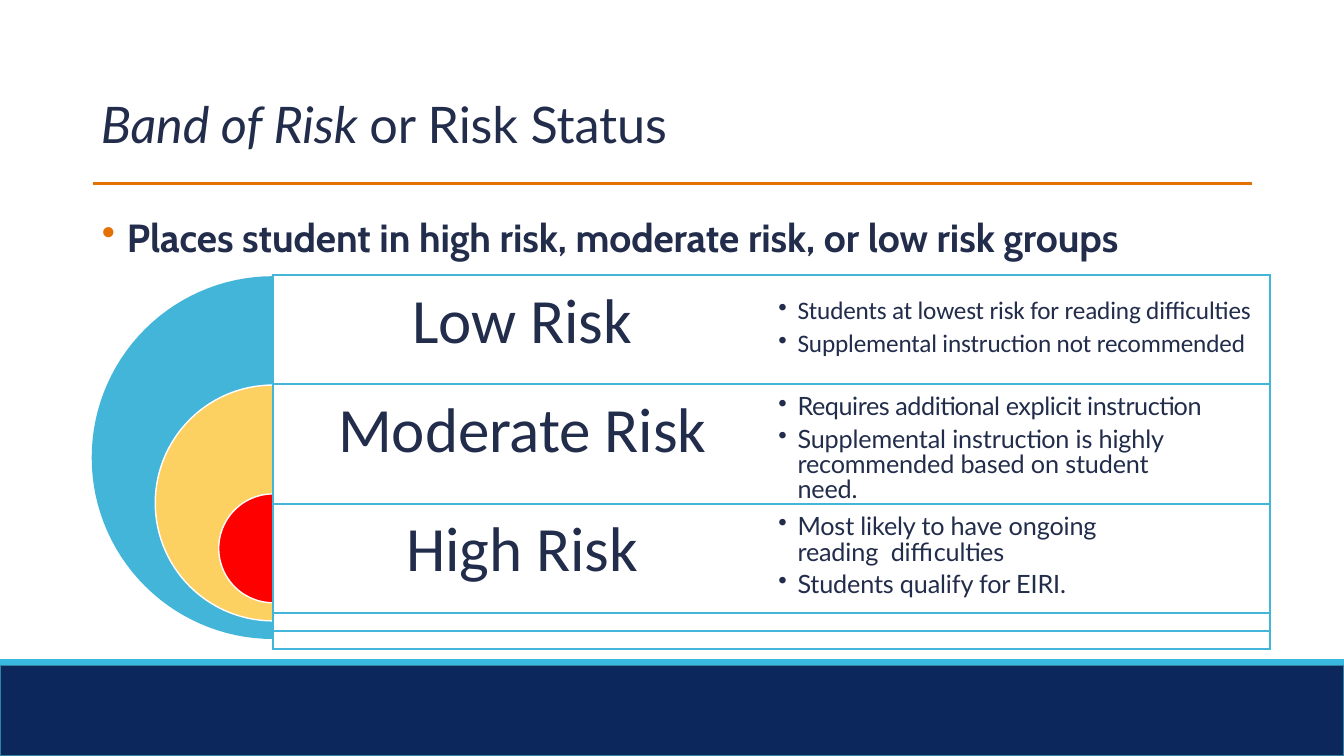
from math import cos, pi, sin

from lxml.etree import SubElement
from pptx import Presentation
from pptx.dml.color import RGBColor
from pptx.enum.shapes import MSO_CONNECTOR as CONN, MSO_SHAPE as SHAPE
from pptx.enum.text import PP_ALIGN as ALIGN
from pptx.oxml import parse_xml
from pptx.oxml.ns import nsdecls, qn
from pptx.util import Inches, Pt

NAVY, ORANGE, BLUE, INK = "0B275C", "E57102", "42B5D9", "222C4B"
HEADING = {"name": "Calibri", "size": Pt(45)}
LATO = {"name": "Lato", "size": Pt(18)}

# Heading, top inset, bullet top inset, bullet right inset, bullet font,
# then bullets as (text, spacing in hundredths of a point, paragraph format)
RISKS = [
    ("Low Risk", 0.2, 0, {"name": "Calibri", "size": Pt(18)}, [
        ("Students at lowest risk for reading difficulties", -10, {}),
        ("Supplemental instruction not recommended", -10,
         {"space_before": Pt(1.4)}),
    ]),
    ("Moderate Risk", 0.07, 0.6, LATO, [
        ("Requires additional explicit instruction", -30, {}),
        ("Supplemental instruction is highly  recommended based on student need.",
         -10, {"space_before": Pt(5), "line_spacing": Pt(18)}),
    ]),
    ("High Risk", 0.1, 1.3, LATO, [
        ("Most likely to have ongoing reading  difficulties", -10,
         {"line_spacing": Pt(19)}),
        ("Students qualify for EIRI.", -10, {"space_before": Pt(1.2)}),
    ]),
]


def rgb(color):
    return RGBColor.from_string(color)


def set_attrs(obj, values):
    for name, value in values.items():
        setattr(obj, name, value)


def add_run(p, text, font, spacing=-10):
    r = p.add_run()
    r.text = text
    set_attrs(r.font, font)
    r.font.color.rgb = rgb(INK)
    r.font._element.set("spc", str(spacing))


def set_bullet(p, margin, indent, color=INK):
    pPr = p._p.get_or_add_pPr()
    pPr.set("marL", str(Inches(margin)))
    pPr.set("indent", str(Inches(indent)))
    SubElement(SubElement(pPr, qn("a:buClr")), qn("a:srgbClr"), val=color)
    SubElement(pPr, qn("a:buChar"), char="•")


def add_text_box(slide, left, top, width, height):
    """Return the first paragraph of a new box."""
    sp = slide.shapes.add_textbox(
        Inches(left), Inches(top), Inches(width), Inches(height))
    tf = sp.text_frame
    set_attrs(tf, {"word_wrap": True, "margin_left": 0, "margin_right": 0,
                   "margin_top": Inches(0.01), "margin_bottom": 0})
    return tf.paragraphs[0]


def add_rule(slide, left, right, y, color, weight):
    line = slide.shapes.add_connector(
        CONN.STRAIGHT, Inches(left), Inches(y), Inches(right), Inches(y))
    line.line.color.rgb = rgb(color)
    line.line.width = Pt(weight)
    SubElement(line._element.spPr, qn("a:effectLst"))


def add_footer(slide):
    sp = slide.shapes.add_shape(
        SHAPE.RECTANGLE, 0, Inches(6.6), Inches(13.33), Inches(0.9))
    sp.shadow.inherit = False
    sp.fill.solid()
    sp.fill.fore_color.rgb = rgb(NAVY)
    sp.line.color.rgb = rgb("2E849F")
    sp.line.width = Pt(1)
    add_rule(slide, 0, 13.33, 6.57, "39B9DF", 4)


def add_half_disc(slide, right, top, radius, color, outlined):
    """Draw the left half of a disc, its flat side at right."""
    steps = 60
    points = [(Inches(right - radius * sin(pi * i / steps)),
               Inches(top + radius - radius * cos(pi * i / steps)))
              for i in range(steps + 1)]
    builder = slide.shapes.build_freeform(*points[0])
    builder.add_line_segments(points[1:], close=True)
    sp = builder.convert_to_shape()
    sp.shadow.inherit = False
    sp.fill.solid()
    sp.fill.fore_color.rgb = rgb(color)
    if outlined:
        sp.line.color.rgb = rgb("FFFFFF")
        sp.line.width = Pt(1)
    else:
        sp.line.fill.background()


def format_cell(cell, sides, top=0, right=0):
    """Clear the fill and draw borders on the given sides only."""
    set_attrs(cell, {"margin_left": 0, "margin_right": Inches(right),
                     "margin_top": Inches(top), "margin_bottom": 0})
    cell.fill.background()
    tcPr = cell._tc.get_or_add_tcPr()
    for i, side in enumerate("LRTB"):
        paint = (f'<a:solidFill><a:srgbClr val="{BLUE}"/></a:solidFill>'
                 if side in sides else "<a:noFill/>")
        tcPr.insert(i, parse_xml(
            f'<a:ln{side} {nsdecls("a")} w="{Pt(1.5)}">{paint}</a:ln{side}>'))


def fill_bullets(cell, bullets, font):
    tf = cell.text_frame
    for i, (text, spacing, layout) in enumerate(bullets):
        p = tf.add_paragraph() if i else tf.paragraphs[0]
        set_attrs(p, layout)
        set_bullet(p, 0.54, -0.19)
        add_run(p, text, font, spacing)


def add_risk_table(slide):
    heights = [1.08] * len(RISKS) + [0.18] * 2
    table = slide.shapes.add_table(
        len(heights), 2, Inches(2.71), Inches(2.73),
        Inches(9.89), Inches(sum(heights))).table
    set_attrs(table, {"first_row": False, "horz_banding": False})
    for column, width in zip(table.columns, (4.66, 5.23)):
        column.width = Inches(width)
    for row, height in zip(table.rows, heights):
        row.height = Inches(height)

    for i, (heading, top, right, font, bullets) in enumerate(RISKS):
        name, details = table.rows[i].cells
        format_cell(name, "LTB", 0.08)
        format_cell(details, "RTB", top, right)
        p = name.text_frame.paragraphs[0]
        p.alignment = ALIGN.CENTER
        p._p.get_or_add_pPr().set("marL", str(Inches(0.28)))
        add_run(p, heading, HEADING)
        fill_bullets(details, bullets, font)

    for i in range(len(RISKS), len(heights)):
        table.cell(i, 0).merge(table.cell(i, 1))
        for cell in table.rows[i].cells:
            format_cell(cell, "LRTB")
            SubElement(cell.text_frame.paragraphs[0]._p,
                       qn("a:endParaRPr"), sz="800")


def main():
    prs = Presentation()
    prs.slide_width, prs.slide_height = Inches(13.33), Inches(7.5)
    slide = prs.slides.add_slide(prs.slide_layouts[6])
    add_footer(slide)
    add_rule(slide, 0.92, 12.42, 1.82, ORANGE, 2.5)

    title = add_text_box(slide, 1, 0.91, 8, 0.63)
    for text, italic in (("Band of Risk ", True), ("or Risk Status", False)):
        add_run(title, text, {"name": "Lato", "size": Pt(36), "italic": italic})

    lead = add_text_box(slide, 1, 2.11, 10.6, 0.49)
    set_bullet(lead, 0.26, -0.25, ORANGE)
    add_run(lead, "Places student in high risk, moderate risk, or low risk groups",
            {"name": "Cabin", "size": Pt(28), "bold": True}, -5)

    for i, color in enumerate((BLUE, "FCD162", "FF0000")):
        add_half_disc(slide, 2.71, 2.74 + 1.08 * i, 1.8 - 0.63 * i, color, i > 0)
    add_risk_table(slide)
    prs.save("out.pptx")


if __name__ == "__main__":
    main()
